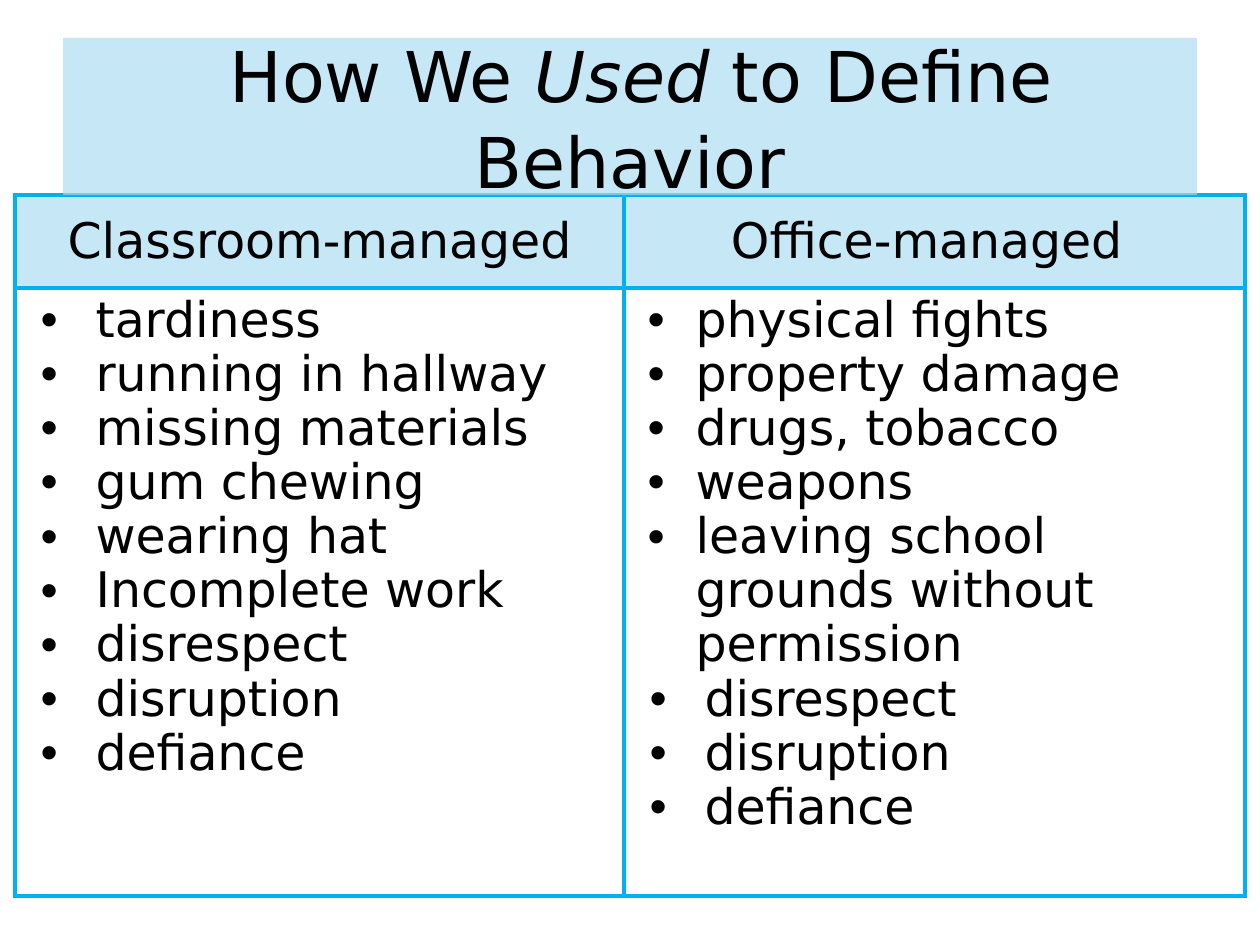
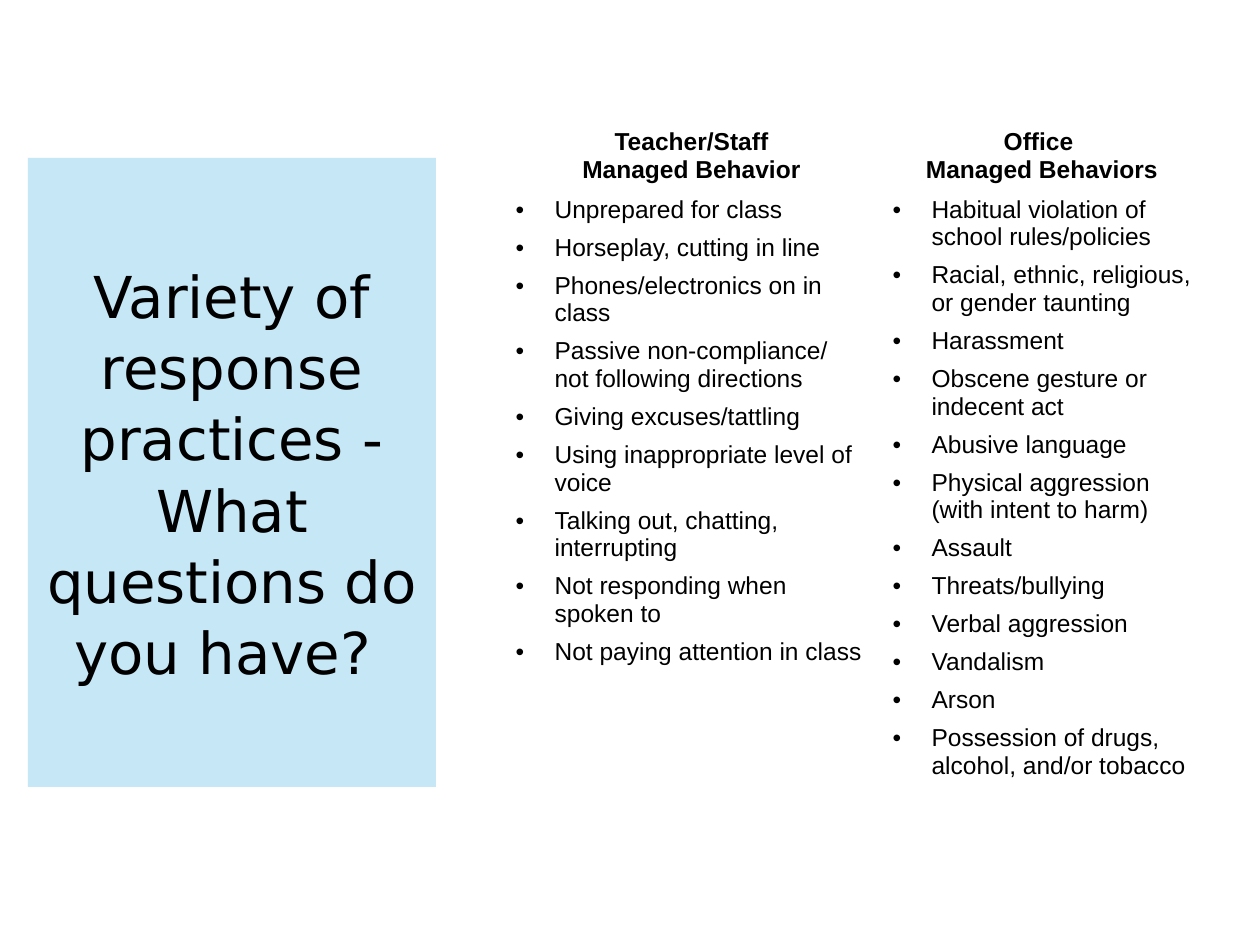
import lxml.etree
import pptx
import pptx.dml.color
import pptx.enum.text
import pptx.oxml.ns
import pptx.util

PX = 914400 / 126  # EMU in one px
COLOURS = {"text": "000000", "band": "A9DCF2", "rule": "00B0F0"}
SANS, PLAIN = "DejaVu Sans", "Arial"
CENTER = pptx.enum.text.PP_ALIGN.CENTER
MIDDLE = pptx.enum.text.MSO_ANCHOR.MIDDLE


def px(length):
    return pptx.util.Emu(round(length * PX))


def colour(name):
    return pptx.dml.color.RGBColor.from_string(COLOURS[name])


def child(parent, tag, **attributes):
    return lxml.etree.SubElement(parent, pptx.oxml.ns.qn(tag), attributes)


class Deck:
    """Holds the shared style and the slide being built."""

    def __init__(self):
        self.deck = pptx.Presentation()
        self.deck.slide_width, self.deck.slide_height = px(1260), px(945)
        self.page = None

    def new_page(self):
        self.page = self.deck.slides.add_slide(self.deck.slide_layouts[5])

    def tint(self, fill, owner, opacity):
        fill.solid()
        fill.fore_color.rgb = colour("band")
        for hue in owner.iter(pptx.oxml.ns.qn("a:srgbClr")):
            if hue.get("val") == COLOURS["band"]:
                child(hue, "a:alpha", val=str(opacity * 1000))

    def span(self, para, text, size, font=SANS, bold=False, italic=False):
        span = para.add_run()
        span.text = text
        span.font.size, span.font.name = pptx.util.Pt(size), font
        span.font.bold, span.font.italic = bold, italic
        span.font.color.rgb = colour("text")

    def title(self, spans, place, size, opacity):
        box = self.page.shapes.title
        box.left, box.top, box.width, box.height = map(px, place)
        self.tint(box.fill, box.element, opacity)
        frame = box.text_frame
        frame.word_wrap = True
        frame.auto_size = pptx.enum.text.MSO_AUTO_SIZE.NONE
        frame.vertical_anchor = MIDDLE
        para = frame.paragraphs[0]
        para.alignment, para.line_spacing = CENTER, 1.03
        for text, italic in spans:
            self.span(para, text, size, italic=italic)
        # Keep the title in front of the table
        box.element.getparent().append(box.element)

    def table(self, left, top, widths, heights):
        frame = self.page.shapes.add_table(
            len(heights), len(widths), px(left), px(top), px(sum(widths)), px(sum(heights)))
        table = frame.table
        table.first_row = table.horz_banding = False
        for column, width in zip(table.columns, widths):
            column.width = px(width)
        for row, height in zip(table.rows, heights):
            row.height = px(height)
        for cell in table.iter_cells():
            cell.fill.background()
        return table

    def borders(self, table, width):
        for cell in table.iter_cells():
            props = cell._tc.get_or_add_tcPr()
            for index, side in enumerate("LRTB"):
                line = child(props, f"a:ln{side}", w=str(pptx.util.Pt(width)))
                child(child(line, "a:solidFill"), "a:srgbClr", val=COLOURS["rule"])
                props.insert(index, line)

    def paras(self, cell, texts):
        frame = cell.text_frame
        for index, text in enumerate(texts):
            yield (frame.add_paragraph() if index else frame.paragraphs[0]), text

    def heading(self, cell, lines, size, font=SANS, bold=False):
        for para, text in self.paras(cell, lines):
            para.alignment = CENTER
            self.span(para, text, size, font, bold)

    def bullets(self, cell, items, size, font, indent, spacing=1.0, after=0):
        """Each item is a text, or a text with its own indent pair."""
        for para, item in self.paras(cell, items):
            text, (margin, hang) = (item, indent) if isinstance(item, str) else item
            para.line_spacing, para.space_after = spacing, pptx.util.Pt(after)
            self.span(para, text, size, font)
            props = para._p.get_or_add_pPr()
            props.set("marL", str(px(margin)))
            props.set("indent", str(-px(hang)))
            child(child(props, "a:buClr"), "a:srgbClr", val=COLOURS["text"])
            child(props, "a:buFont", typeface=PLAIN)
            child(props, "a:buChar", char="•")


def build_used_to_define(deck):
    deck.new_page()
    table = deck.table(15, 195, (609, 621), (93, 608))
    wide, narrow = (68, 55), (59, 48)
    shared = ["disrespect", "disruption", "defiance"]
    classroom = ["tardiness", "running in hallway", "missing materials",
                 "gum chewing", "wearing hat", "Incomplete work"] + shared
    office = ["physical fights", "property damage", "drugs, tobacco", "weapons",
              "leaving school grounds without permission"]
    office += [(text, wide) for text in shared]
    columns = (("Classroom-managed", classroom, wide),
               ("Office-managed ", office, narrow))
    for index, (heading, items, indent) in enumerate(columns):
        head = table.cell(0, index)
        deck.tint(head.fill, head._tc, 67)
        head.vertical_anchor = MIDDLE
        deck.heading(head, [heading], 28)
        deck.bullets(table.cell(1, index), items, 28, SANS, indent, spacing=0.95)
    deck.borders(table, 2.25)
    deck.title([(" How We ", False), ("Used", True), (" to Define Behavior", False)],
               (63, 38, 1134, 157), 40, 67)


def build_response_practices(deck):
    deck.new_page()
    deck.title([("Variety of response practices - What questions do you have? ", False)],
               (28, 158, 408, 629), 33, 66)
    table = deck.table(503, 122, (377, 324), (67, 632))
    columns = (
        (["Teacher/Staff", "Managed Behavior"],
         ["Unprepared for class", "Horseplay, cutting in line",
          "Phones/electronics on in class",
          "Passive non-compliance/ not following directions",
          "Giving excuses/tattling", "Using inappropriate level of voice",
          "Talking out, chatting, interrupting", "Not responding when spoken to",
          "Not paying attention in class"]),
        (["Office ", "Managed Behaviors"],
         ["Habitual violation of school rules/policies",
          "Racial, ethnic, religious, or gender taunting", "Harassment",
          "Obscene gesture or indecent act", "Abusive language",
          "Physical aggression (with intent to harm)", "Assault",
          "Threats/bullying", "Verbal aggression", "Vandalism", "Arson",
          "Possession of drugs, alcohol, and/or tobacco"]),
    )
    for index, (heading, items) in enumerate(columns):
        deck.heading(table.cell(0, index), heading, 14, PLAIN, bold=True)
        deck.bullets(table.cell(1, index), items, 14, PLAIN, (39, 39), after=6)


def main():
    deck = Deck()
    build_used_to_define(deck)
    build_response_practices(deck)
    deck.deck.save("out.pptx")


if __name__ == "__main__":
    main()
